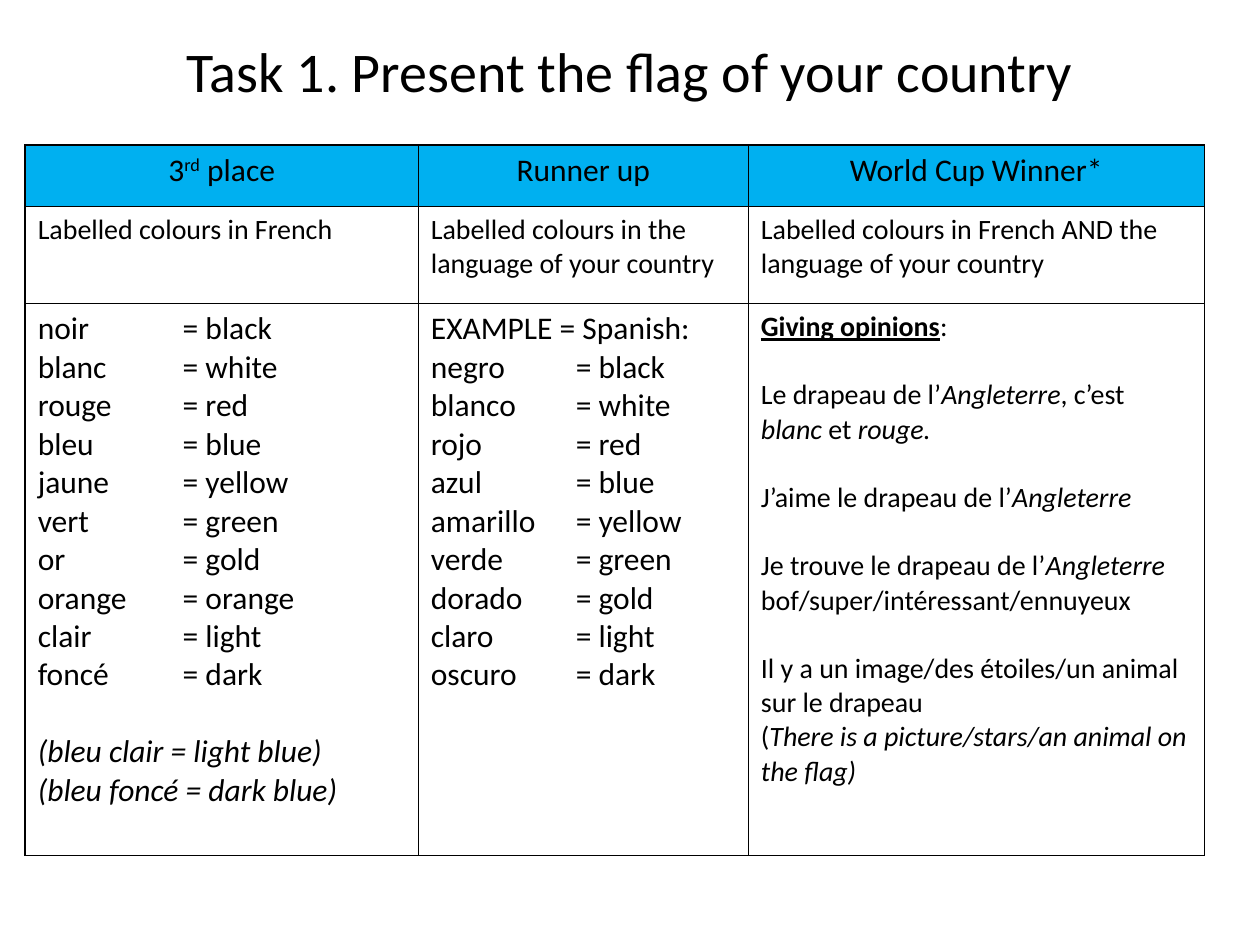
import pptx
import pptx.util
import pptx.dml.color
import pptx.enum.text
import pptx.oxml
import pptx.oxml.ns
from lxml import etree

# Content: a paragraph is a list of (text, style) runs; None opens a gap
TITLE = "Task 1. Present the flag of your country"
HEADS = [
    [("3", ""), ("rd", "sup"), (" place", "")],
    [("Runner up", "")],
    [("World Cup Winner*", "")],
]
TASKS = [
    "Labelled colours in French",
    "Labelled colours in the language of your country",
    "Labelled colours in French AND the language of your country",
]
ENGLISH = ["black", "white", "red", "blue", "yellow", "green", "gold",
           "orange", "light", "dark"]
FRENCH = ["noir", "blanc", "rouge", "bleu", "jaune", "vert", "or",
          "orange", "clair", "foncé"]
SPANISH = ["negro", "blanco", "rojo", "azul", "amarillo", "verde", "dorado",
           "claro", "oscuro"]
SPANISH_ENGLISH = [word for word in ENGLISH if word != "orange"]
NOTES = ["(bleu clair = light blue)", "(bleu foncé = dark blue)"]
OPINIONS = [
    [("Giving opinions", "head"), (":", "")],
    None,
    [("Le drapeau de l’", ""), ("Angleterre", "it"), (", c’est ", ""),
     ("blanc", "it"), (" et ", ""), ("rouge.", "it")],
    None,
    [("J’aime le drapeau de l’", ""), ("Angleterre", "it")],
    None,
    [("Je trouve le drapeau de l’", ""), ("Angleterre ", "it"),
     ("bof/super/intéressant/ennuyeux", "")],
    None,
    [("Il y a un image/des étoiles/un animal sur le drapeau", "")],
    [("(", ""), ("There is a picture/stars/an animal on the flag)", "it")],
]

# Theme and grid, in points and inches
THEME = {"font": "Calibri", "ink": "000000", "head": "00B0F0",
         "title": 32, "large": 18, "small": 16, "rule": 1, "line": 1.22}
WIDE, HIGH = 10, 7.5
COLS = [3.12, 2.62, 3.62]
ROWS = [0.49, 0.77, 4.38]
LEFT, TOP = 0.2, 1.15
TAB = 1.15

inch, point = pptx.util.Inches, pptx.util.Pt
tag = pptx.oxml.ns.qn
align = pptx.enum.text.PP_ALIGN


def tint(code):
    return pptx.dml.color.RGBColor.from_string(code)


def pairs(words, sense):
    return [[(f"{word}\t= {mean}", "")] for word, mean in zip(words, sense)]


def write(frame, paras, size, side=align.LEFT):
    gap, first = False, True
    for runs in paras:
        if runs is None:
            gap = True
            continue
        para = frame.paragraphs[0] if first else frame.add_paragraph()
        first = False
        para.alignment = side
        if gap:
            para.space_before = point(round(size * THEME["line"], 1))
            gap = False
        if any("\t" in text for text, _ in runs):
            stops = etree.SubElement(para._p.get_or_add_pPr(), tag("a:tabLst"))
            etree.SubElement(stops, tag("a:tab"), pos=str(inch(TAB)), algn="l")
        for text, style in runs:
            run = para.add_run()
            run.text = text
            font = run.font
            font.name, font.size = THEME["font"], point(size)
            font.color.rgb = tint(THEME["ink"])
            font.bold = font.underline = style == "head"
            font.italic = style == "it"
            if style == "sup":
                run._r.get_or_add_rPr().set("baseline", "30000")


def border(cell):
    props = cell._tc.get_or_add_tcPr()
    for spot, edge in enumerate(["a:lnL", "a:lnR", "a:lnT", "a:lnB"]):
        line = etree.Element(tag(edge), w=str(point(THEME["rule"])))
        fill = etree.SubElement(line, tag("a:solidFill"))
        etree.SubElement(fill, tag("a:srgbClr"), val=THEME["ink"])
        props.insert(spot, line)


def main():
    deck = pptx.Presentation()
    deck.slide_width, deck.slide_height = inch(WIDE), inch(HIGH)
    slide = deck.slides.add_slide(deck.slide_layouts[6])

    # Title
    box = slide.shapes.add_textbox(inch(0.5), inch(0.29), inch(9), inch(0.54))
    frame = box.text_frame
    frame.word_wrap = True
    frame.vertical_anchor = pptx.enum.text.MSO_ANCHOR.MIDDLE
    write(frame, [[(TITLE, "")]], THEME["title"], align.CENTER)

    # Table grid
    table = slide.shapes.add_table(
        len(ROWS), len(COLS), inch(LEFT), inch(TOP),
        inch(sum(COLS)), inch(sum(ROWS))).table
    table.first_row = table.horz_banding = False
    for col, width in zip(table.columns, COLS):
        col.width = inch(width)
    for row, height in zip(table.rows, ROWS):
        row.height = inch(height)

    # Cells, row by row: paragraphs, type size, alignment
    large, small = THEME["large"], THEME["small"]
    french = pairs(FRENCH, ENGLISH) + [None] + [[(note, "it")] for note in NOTES]
    spanish = [[("EXAMPLE = Spanish:", "")]] + pairs(SPANISH, SPANISH_ENGLISH)
    grid = [
        [([head], large, align.CENTER) for head in HEADS],
        [([[(task, "")]], small, align.LEFT) for task in TASKS],
        [(french, large, align.LEFT), (spanish, large, align.LEFT),
         (OPINIONS, small, align.LEFT)],
    ]
    for r, row in enumerate(grid):
        for c, (paras, size, side) in enumerate(row):
            cell = table.cell(r, c)
            if r == 0:
                cell.fill.solid()
                cell.fill.fore_color.rgb = tint(THEME["head"])
            else:
                cell.fill.background()
            border(cell)
            write(cell.text_frame, paras, size, side)

    deck.save("out.pptx")


if __name__ == "__main__":
    main()
